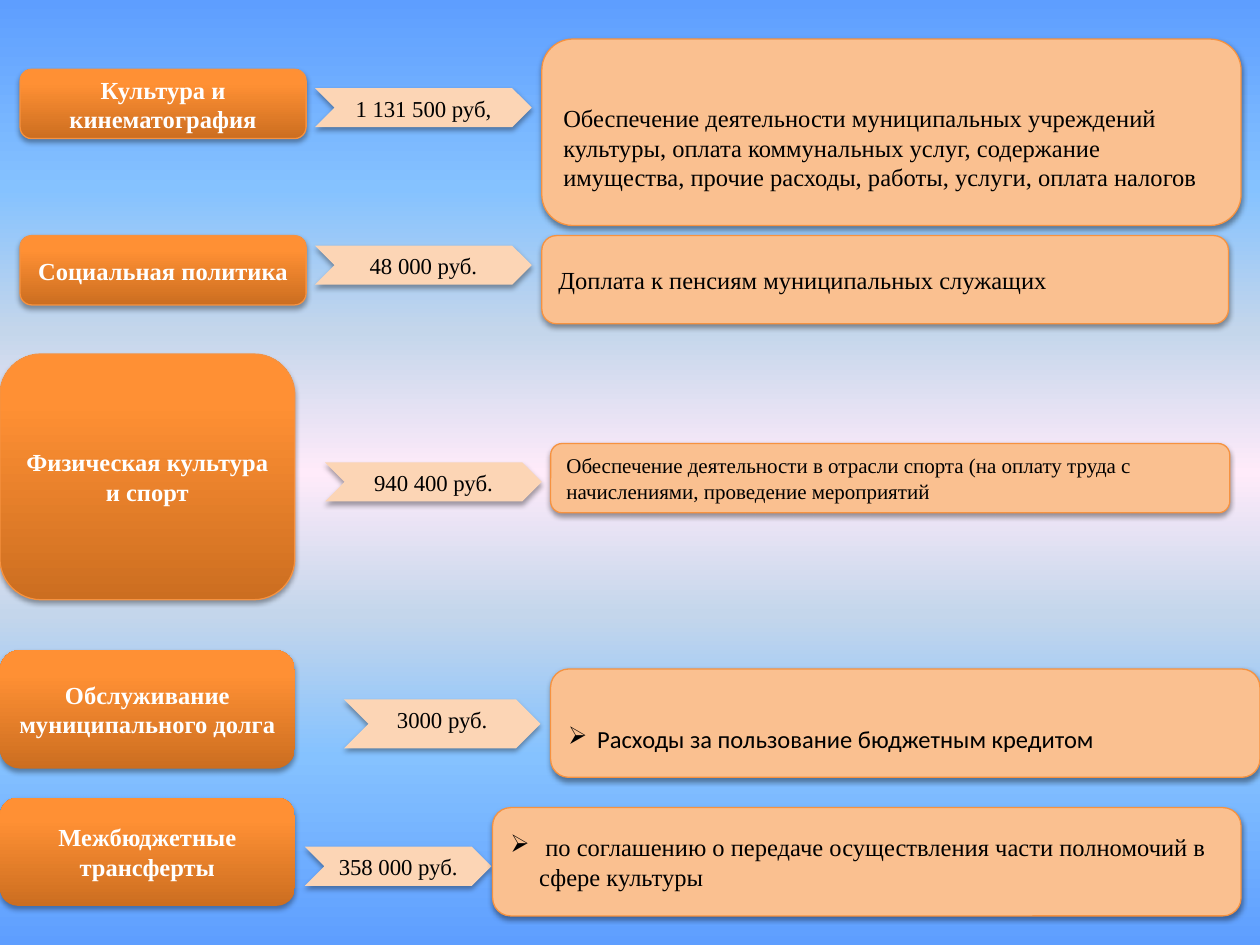
from dataclasses import dataclass

from lxml import etree
from pptx import Presentation
from pptx.dml.color import RGBColor
from pptx.enum.shapes import MSO_SHAPE
from pptx.enum.text import MSO_ANCHOR, PP_ALIGN
from pptx.oxml.ns import qn
from pptx.util import Inches, Pt

ROUND, CHEVRON = MSO_SHAPE.ROUNDED_RECTANGLE, MSO_SHAPE.CHEVRON
TOP, MIDDLE = MSO_ANCHOR.TOP, MSO_ANCHOR.MIDDLE
LEFT, CENTER = PP_ALIGN.LEFT, PP_ALIGN.CENTER


@dataclass(frozen=True)
class Theme:
    """Colours, fonts and type sizes of the slide."""
    sky: tuple = ((0, "5E9EFF"), (20, "85C2FF"), (35, "C4D6EB"), (50, "FFEBFA"),
                  (65, "C4D6EB"), (80, "85C2FF"), (100, "5E9EFF"))
    orange: tuple = ((0, "CC6E20"), (80, "FF9034"), (100, "FF9136"))
    edge: str = "F69240"
    peach: str = "FAC090"
    pale: str = "FCD5B5"
    dark: str = "000000"
    light: str = "FFFFFF"
    serif: str = "Times New Roman"
    sans: str = "Calibri"
    body: int = 14
    sum: int = 13
    small: int = 12


def apply(item, values):
    """Set attributes from a dict of format values."""
    for name, value in values.items():
        setattr(item, name, value)


def child(parent, tag, **attrs):
    """Append an XML element with the given attributes."""
    node = etree.SubElement(parent, qn(tag))
    for name, value in attrs.items():
        node.set(name, str(value))
    return node


def blend(fill, root, stops, angle):
    """Give a fill a linear gradient with any number of stops."""
    fill.gradient()
    fill.gradient_angle = angle
    rows = root.find(".//" + qn("a:gsLst"))
    for old in list(rows):
        rows.remove(old)
    for place, color in stops:
        stop = child(rows, "a:gs", pos=place * 1000)
        child(stop, "a:srgbClr", val=color)


class Board:
    """Draws the elements of one slide in one theme."""

    def __init__(self, slide, theme):
        """Keep the slide and theme, and paint the background."""
        self.slide, self.theme = slide, theme
        blend(slide.background.fill, slide.element, theme.sky, 270)

    def shape(self, kind, box, fill, edge, alpha, gap):
        """Add a filled shape with a soft shadow below it."""
        shape = self.slide.shapes.add_shape(kind, *map(Inches, box))
        if isinstance(fill, str):
            shape.fill.solid()
            shape.fill.fore_color.rgb = RGBColor.from_string(fill)
        else:
            blend(shape.fill, shape.element, fill, 90)
        if edge:
            shape.line.color.rgb = RGBColor.from_string(self.theme.edge)
            shape.line.width = Pt(0.75)
        else:
            shape.line.fill.background()
        shape.shadow.inherit = False
        effects = shape.element.spPr.find(qn("a:effectLst"))
        shadow = child(effects, "a:outerShdw", blurRad=Pt(3.1), dist=Pt(gap),
                       dir=5400000, rotWithShape=0)
        color = child(shadow, "a:srgbClr", val=self.theme.dark)
        child(color, "a:alpha", val=alpha * 1000)
        return shape

    def label(self, shape, text, frame, align, font, color):
        """Put one formatted paragraph into a shape."""
        apply(shape.text_frame, {"word_wrap": True, **frame})
        para = shape.text_frame.paragraphs[0]
        para.alignment = align
        run = para.add_run()
        run.text = text
        apply(run.font, {"name": self.theme.serif, **font})
        run.font.color.rgb = RGBColor.from_string(color)
        return para

    def pill(self, text, box, edge):
        """Add the orange label of a budget section."""
        look = self.theme
        shape = self.shape(ROUND, box, look.orange, edge, 35, 1.8)
        self.label(shape, text, {"vertical_anchor": MIDDLE}, CENTER,
                   {"size": Pt(look.body), "bold": True}, look.light)

    def arrow(self, text, box):
        """Add the chevron that shows a sum."""
        look = self.theme
        shape = self.shape(CHEVRON, box, look.pale, False, 35, 1.8)
        self.label(shape, text, {"vertical_anchor": TOP}, CENTER,
                   {"size": Pt(look.sum)}, look.dark)

    def card(self, text, box, size=None, name=None, drop=0, bullet=False):
        """Add the peach card that tells what the sum is for."""
        look = self.theme
        shape = self.shape(ROUND, box, look.peach, True, 38, 1.6)
        frame = {"vertical_anchor": MIDDLE, "margin_top": Inches(0.05 + drop)}
        font = {"size": Pt(size or look.body), "name": name or look.serif}
        para = self.label(shape, text, frame, LEFT, font, look.dark)
        if bullet:
            props = para._p.get_or_add_pPr()
            indent = {"marL": Inches(0.23), "indent": -Inches(0.23)}
            for key, value in indent.items():
                props.set(key, str(value))
            child(props, "a:buChar", char="➢")


def main():
    """Build the slide and save it."""
    deck = Presentation()
    apply(deck, {"slide_width": Inches(10), "slide_height": Inches(7.5)})
    look = Theme()
    board = Board(deck.slides.add_slide(deck.slide_layouts[6]), look)

    pills = [
        ("Культура и кинематография", (0.16, 0.55, 2.27, 0.55), True),
        ("Социальная политика", (0.16, 1.87, 2.27, 0.55), True),
        ("Физическая культура и спорт", (0, 2.81, 2.34, 1.95), True),
        ("Обслуживание муниципального долга", (0, 5.16, 2.34, 0.94), False),
        ("Межбюджетные трансферты", (0, 6.33, 2.34, 0.86), False),
    ]
    arrows = [
        ("1 131 500 руб,", (2.5, 0.7, 1.72, 0.31)),
        ("48 000 руб.", (2.5, 1.95, 1.72, 0.31)),
        ("940 400 руб.", (2.58, 3.67, 1.72, 0.31)),
        ("3000 руб.", (2.73, 5.55, 1.56, 0.39)),
        ("358 000 руб.", (2.42, 6.72, 1.48, 0.31)),
    ]
    cards = [
        ("Обеспечение деятельности муниципальных учреждений культуры, "
         "оплата коммунальных услуг, содержание имущества, прочие расходы, "
         "работы, услуги, оплата налогов",
         (4.3, 0.31, 5.55, 1.48), {"drop": 0.24}),
        ("Доплата к пенсиям муниципальных служащих",
         (4.3, 1.87, 5.45, 0.7), {}),
        ("Обеспечение деятельности в отрасли спорта (на оплату труда с "
         "начислениями, проведение мероприятий",
         (4.37, 3.52, 5.39, 0.55), {"size": look.small}),
        ("Расходы за пользование бюджетным кредитом",
         (4.37, 5.31, 5.63, 0.86),
         {"name": look.sans, "drop": 0.25, "bullet": True}),
        (" по соглашению о передаче осуществления части полномочий в "
         "сфере культуры", (3.91, 6.41, 5.94, 0.86), {"bullet": True}),
    ]
    for pill, arrow, (text, box, style) in zip(pills, arrows, cards):
        board.pill(*pill)
        board.arrow(*arrow)
        board.card(text, box, **style)
    deck.save("out.pptx")


if __name__ == "__main__":
    main()
